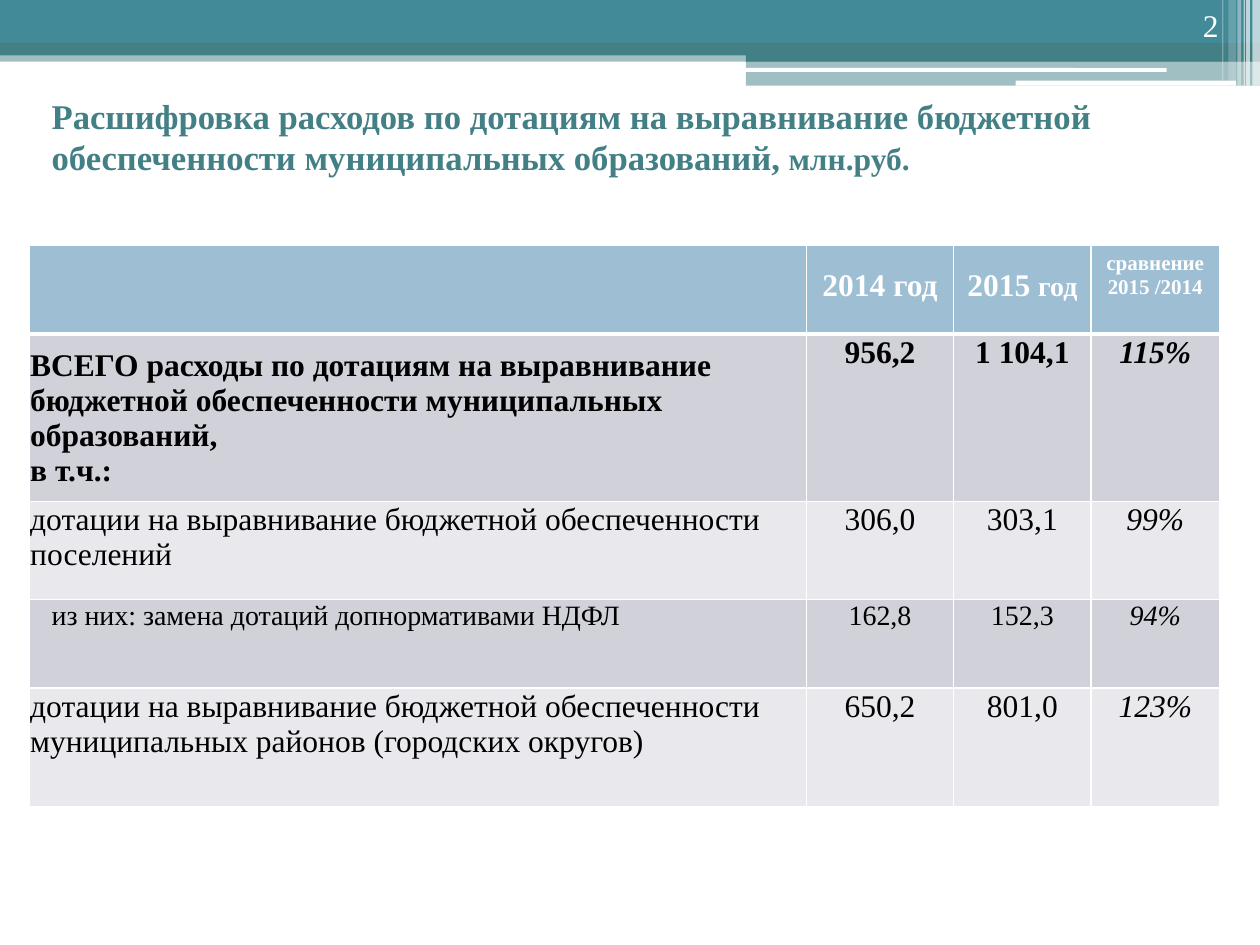
from dataclasses import dataclass

import pptx
import pptx.dml.color
import pptx.enum.shapes
import pptx.enum.text
import pptx.oxml
import pptx.oxml.ns
import pptx.util
from lxml import etree

SHAPES = pptx.enum.shapes.MSO_SHAPE
ALIGN = pptx.enum.text.PP_ALIGN
ANCHOR = pptx.enum.text.MSO_ANCHOR
GRID_COLUMNS, GRID_ROWS = 100, 75


@dataclass(frozen=True)
class Theme:
    font: str = "Times New Roman"
    teal: str = "438086"
    bright_teal: str = "428A98"
    white: str = "FFFFFF"
    black: str = "000000"
    header: str = "9DBED3"
    bands: tuple = ("D1D1DA", "E9E9ED")
    title: float = 19.8
    body: float = 18
    detail: float = 16
    small: float = 12


class SlideBuilder:
    def __init__(self, presentation, theme):
        self.presentation = presentation
        self.theme = theme
        self.slide = presentation.slides.add_slide(presentation.slide_layouts[5])

    def across(self, columns):
        return round(self.presentation.slide_width * columns / GRID_COLUMNS)

    def down(self, rows):
        return round(self.presentation.slide_height * rows / GRID_ROWS)

    def box(self, left, top, width, height):
        return self.across(left), self.down(top), self.across(width), self.down(height)

    def add_run(self, paragraph, text, size, color, bold=False, italic=False):
        run = paragraph.add_run()
        run.text = text
        font = run.font
        font.name, font.size = self.theme.font, pptx.util.Pt(size)
        font.bold, font.italic = bold, italic
        font.color.rgb = pptx.dml.color.RGBColor.from_string(color)

    def bar(self, area, color, opacity=100, kind=SHAPES.RECTANGLE):
        shape = self.slide.shapes.add_shape(kind, *self.box(*area))
        shape.shadow.inherit = False
        shape.line.fill.background()
        shape.fill.solid()
        shape.fill.fore_color.rgb = pptx.dml.color.RGBColor.from_string(color)
        if opacity < 100:
            color_node = shape.fill._xPr.find(".//" + pptx.oxml.ns.qn("a:srgbClr"))
            etree.SubElement(color_node, pptx.oxml.ns.qn("a:alpha"), val=str(opacity * 1000))

    def title(self, area, runs):
        shape = self.slide.shapes.title
        shape.left, shape.top, shape.width, shape.height = self.box(*area)
        frame = shape.text_frame
        frame.word_wrap = True
        frame.auto_size = pptx.enum.text.MSO_AUTO_SIZE.NONE
        frame.vertical_anchor = ANCHOR.TOP
        paragraph = frame.paragraphs[0]
        paragraph.alignment = ALIGN.LEFT
        for text, size in runs:
            self.add_run(paragraph, text, size, self.theme.teal, bold=True)

    def page_number(self, area, text):
        frame = self.slide.shapes.add_textbox(*self.box(*area)).text_frame
        frame.word_wrap = True
        frame.vertical_anchor = ANCHOR.BOTTOM
        paragraph = frame.paragraphs[0]
        paragraph.alignment = ALIGN.RIGHT
        self.add_run(paragraph, text, self.theme.body, self.theme.white)

    def table(self, left, top, widths, heights):
        area = self.box(left, top, sum(widths), sum(heights))
        table = self.slide.shapes.add_table(len(heights), len(widths), *area).table
        table.horz_banding = False
        for column, width in zip(table.columns, widths):
            column.width = self.across(width)
        for row, height in zip(table.rows, heights):
            row.height = self.down(height)
        return table

    def borders(self, cell, is_header, below_header):
        properties = cell._tc.get_or_add_tcPr()
        thick_sides = {"B": is_header, "T": below_header}
        for index, side in enumerate("LRTB"):
            width = pptx.util.Pt(3 if thick_sides.get(side) else 1)
            line = pptx.oxml.parse_xml(
                f'<a:ln{side} {pptx.oxml.ns.nsdecls("a")} w="{width}"><a:solidFill>'
                f'<a:srgbClr val="{self.theme.white}"/></a:solidFill></a:ln{side}>'
            )
            properties.insert(index, line)

    def cell(self, table, row, column, paragraphs, fill, margins, alignment, anchor):
        cell = table.cell(row, column)
        cell.fill.solid()
        cell.fill.fore_color.rgb = pptx.dml.color.RGBColor.from_string(fill)
        self.borders(cell, row == 0, row == 1)
        cell.margin_left, cell.margin_top, cell.margin_right, cell.margin_bottom = (
            self.across(margins[0]), self.down(margins[1]),
            self.across(margins[2]), self.down(margins[3]))
        cell.vertical_anchor = anchor
        for index, runs in enumerate(paragraphs):
            frame = cell.text_frame
            paragraph = frame.add_paragraph() if index else frame.paragraphs[0]
            paragraph.alignment = alignment
            for run in runs:
                self.add_run(paragraph, *run)


def add_banner(builder):
    theme = builder.theme
    builder.bar((0, 4, 100, 0.9), theme.teal, 50)
    builder.bar((0, 0, 100, 3.4), theme.bright_teal)
    builder.bar((0, 3.4, 100, 1), theme.teal)
    builder.bar((59.2, 3.9, 40.8, 1), theme.teal)
    builder.bar((59.2, 4.8, 40.8, 2), theme.teal, 50)
    for area in ((59.1, 5.4, 33.5, 0.3), (80.6, 6.4, 17.5, 0.4)):
        builder.bar(area, theme.white, kind=SHAPES.ROUNDED_RECTANGLE)
    stripes = (
        (99.4, 0.6, 6.8, 65), (98.9, 0.3, 6.8, 65), (98.7, 0.1, 6.8, 60),
        (98.2, 0.3, 6.8, 40), (97.5, 0.6, 6.4, 20), (97, 0.1, 6.4, 30),
    )
    for left, width, height, opacity in stripes:
        builder.bar((left, 0, width, height), theme.white, opacity)


def add_grants_table(builder):
    theme = builder.theme
    table = builder.table(2.3, 19.5, (61.7, 11.7, 10.9, 10.2), (7, 13.3, 7.8, 7, 9.4))
    headers = (
        ((), 0.5),
        ((("2014 год", theme.body),), 1.8),
        ((("2015 ", theme.body), ("год", theme.detail)), 1.8),
        ((("сравнение 2015 /2014", theme.small),), 0.5),
    )
    for column, (runs, top_margin) in enumerate(headers):
        styled_runs = [(text, size, theme.white, True) for text, size in runs]
        builder.cell(table, 0, column, [styled_runs], theme.header,
                     (1, top_margin, 1, 0.5), ALIGN.CENTER, ANCHOR.TOP)

    records = (
        (("ВСЕГО расходы по дотациям на выравнивание бюджетной обеспеченности "
          "муниципальных образований,", "в т.ч.:"),
         ("956,2", "1 104,1", "115%"), theme.body, 0.1),
        (("дотации на выравнивание бюджетной обеспеченности поселений",),
         ("306,0", "303,1", "99%"), theme.body, 0.1),
        (("из них: замена дотаций допнормативами НДФЛ",),
         ("162,8", "152,3", "94%"), theme.detail, 1.8),
        (("дотации на выравнивание бюджетной обеспеченности "
          "муниципальных районов (городских округов)",),
         ("650,2", "801,0", "123%"), theme.body, 0.1),
    )
    for row, (labels, values, size, indent) in enumerate(records, start=1):
        fill = theme.bands[(row - 1) % 2]
        is_total = row == 1
        paragraphs = [[(label, size, theme.black, is_total)] for label in labels]
        builder.cell(table, row, 0, paragraphs, fill, (indent, 0.1, 0.1, 0),
                     ALIGN.LEFT, ANCHOR.MIDDLE if is_total else ANCHOR.TOP)
        for column, value in enumerate(values, start=1):
            is_ratio = column == len(values)
            builder.cell(table, row, column,
                         [[(value, size, theme.black, is_total, is_ratio)]], fill,
                         (0.1, 0.1, 0.1, 0), ALIGN.CENTER, ANCHOR.TOP)


def main():
    presentation = pptx.Presentation()
    presentation.slide_width = pptx.util.Inches(10)
    presentation.slide_height = pptx.util.Inches(7.5)
    theme = Theme()
    builder = SlideBuilder(presentation, theme)
    add_banner(builder)
    builder.title((3.1, 7, 93.9, 8.6), (
        ("Расшифровка расходов по дотациям на выравнивание бюджетной "
         "обеспеченности муниципальных образований, ", theme.title),
        ("млн.руб.", theme.body),
    ))
    builder.page_number((89.4, 0, 8.3, 4), "2")
    add_grants_table(builder)
    presentation.save("out.pptx")


if __name__ == "__main__":
    main()
